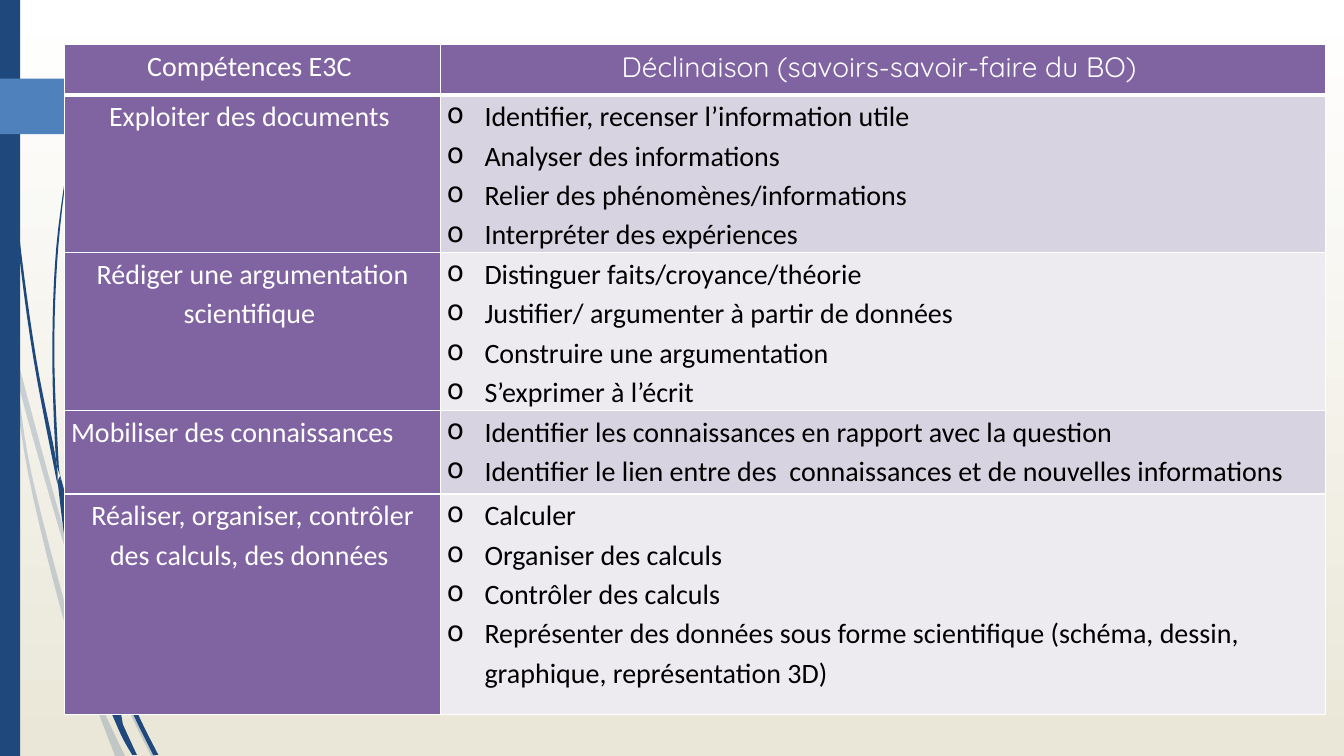
import pptx
import pptx.dml.color
import pptx.enum.shapes
import pptx.enum.text
import pptx.oxml
import pptx.oxml.ns
import pptx.util
from lxml import etree

Cm, Pt = pptx.util.Cm, pptx.util.Pt
RGBColor = pptx.dml.color.RGBColor
ALIGN = pptx.enum.text.PP_ALIGN
SHAPE = pptx.enum.shapes.MSO_SHAPE
qn = pptx.oxml.ns.qn

WHITE = RGBColor(0xFF, 0xFF, 0xFF)
BLACK = RGBColor(0x00, 0x00, 0x00)
CREAM = RGBColor(0xEA, 0xE7, 0xD8)
NAVY = RGBColor(0x1F, 0x49, 0x7D)
BLUE = RGBColor(0x4F, 0x81, 0xBD)
PURPLE = RGBColor(0x80, 0x64, 0xA2)
BANDS = [RGBColor(0xD8, 0xD3, 0xE0), RGBColor(0xED, 0xEA, 0xF0)]

HEADINGS = [("Compétences E3C ", "Calibri"),
            ("Déclinaison (savoirs-savoir-faire du BO) ", "Quicksand")]
# skill, alignment, row height in cm, know-how
SKILLS = [
    ("Exploiter des documents ", ALIGN.CENTER, 3.71, [
        "Identifier, recenser l’information utile",
        "Analyser des informations",
        "Relier des phénomènes/informations",
        "Interpréter des expériences"]),
    ("Rédiger une argumentation scientifique ", ALIGN.CENTER, 3.71, [
        "Distinguer faits/croyance/théorie",
        "Justifier/ argumenter à partir de données",
        "Construire une argumentation",
        "S’exprimer à l’écrit"]),
    ("Mobiliser des connaissances", ALIGN.LEFT, 2.11, [
        "Identifier les connaissances en rapport avec la question",
        "Identifier le lien entre des  connaissances et de nouvelles informations"]),
    ("Réaliser, organiser, contrôler des calculs, des données ", ALIGN.CENTER, 5.56, [
        "Calculer",
        "Organiser des calculs",
        "Contrôler des calculs",
        "Représenter des données sous forme scientifique (schéma, dessin, "
        "graphique, représentation 3D)"]),
]
HEADER_HEIGHT = 1.27
COLUMN_WIDTHS = [9.47, 22.3]
TABLE_LEFT, TABLE_TOP = 1.63, 1.12

# Grass blades: left edge and right edge, in cm from the slide corner
PALE_BLADES = [
    ([(0, 7.59), (0.25, 8.74), (0.71, 11.94), (1.65, 15.77), (2.34, 17.6), (2.9, 19.05)],
     [(0, 7.16), (0.23, 8.18), (0.43, 9.55), (0.79, 11.91), (1.78, 15.72), (2.36, 17.35),
      (3.15, 19.05)]),
    ([(0.36, 8.76), (0.43, 9.55), (1.47, 13.26), (2.13, 15.21)],
     [(0.36, 8.76), (1.57, 13.21), (2.16, 14.88)]),
    ([(7.92, 3.89), (5.79, 6.2), (4.01, 8.84), (2.72, 11.71), (2.16, 14.83), (2.21, 16.41),
      (2.36, 17.35), (2.67, 18.06)],
     [(7.92, 3.91), (5.82, 6.22), (4.06, 8.86), (2.79, 11.73), (2.24, 14.83), (2.31, 16.41),
      (2.67, 18.06)]),
    ([(2.24, 15.49), (3.12, 17.63), (3.81, 19.05)],
     [(2.24, 15.14), (3.23, 17.58), (3.94, 19.05)]),
]
DARK_BLADES = [
    ([(0.08, 0), (0.18, 2.79), (0.43, 5.92), (0.84, 9.02), (1.45, 12.22)],
     [(0.1, 0), (0.2, 2.77), (0.48, 5.89), (0.91, 9.02), (1.4, 11.51), (1.45, 12.22)]),
    ([(1.45, 12.12), (1.73, 14.15), (2.36, 16.74), (2.97, 18.34), (3.33, 19.02)],
     [(1.52, 11.99), (1.63, 12.83), (1.83, 14.12), (2.49, 16.69), (2.79, 17.55),
      (3.1, 18.26), (3.45, 19.02)]),
    ([(1.78, 3.58), (1.42, 6.22), (1.32, 8.86), (1.4, 11.4), (1.52, 11.99)],
     [(1.78, 3.58), (1.47, 6.22), (1.37, 8.86), (1.47, 11.51), (1.52, 11.99)]),
    ([(1.52, 11.99), (1.63, 12.83), (2.24, 15.04), (2.69, 16.38)],
     [(1.52, 11.99), (2.36, 14.99), (2.69, 16.03)]),
    ([(6.6, 8.74), (5.18, 10.29), (3.96, 12.04), (3.1, 14), (2.69, 16.03), (2.69, 16.38),
      (2.79, 17.55), (3.1, 18.26)],
     [(6.63, 8.74), (5.21, 10.31), (4.01, 12.09), (3.18, 14.02), (2.82, 16.08),
      (2.82, 16.66), (3.1, 18.26)]),
    ([(2.82, 16.66), (3.35, 17.98), (3.86, 19.02)],
     [(2.79, 16.28), (3.45, 17.93), (3.99, 19.02)]),
]


def smooth(points, steps=6):
    """Catmull-Rom curve through the points, as a list of EMU pairs."""
    padded = [points[0], *points, points[-1]]
    curve = []
    for a, b, c, d in zip(padded, padded[1:], padded[2:], padded[3:]):
        for t in (step / steps for step in range(steps)):
            curve.append(tuple(
                Cm((2 * q + (r - p) * t + (2 * p - 5 * q + 4 * r - s) * t ** 2
                    + (3 * q - p - 3 * r + s) * t ** 3) / 2)
                for p, q, r, s in zip(a, b, c, d)))
    return curve + [tuple(Cm(v) for v in points[-1])]


def paint(shape, colour, opacity=100):
    shape.shadow.inherit = False
    shape.fill.solid()
    shape.fill.fore_color.rgb = colour
    shape.line.fill.background()
    if opacity < 100:
        rgb = shape.fill._xPr.find(".//" + qn("a:srgbClr"))
        etree.SubElement(rgb, qn("a:alpha"), val=str(opacity * 1000))


def draw_blade(shapes, left_edge, right_edge, opacity):
    outline = smooth(left_edge) + smooth(right_edge)[::-1]
    builder = shapes.build_freeform(*outline[0])
    builder.add_line_segments(outline[1:], close=True)
    paint(builder.convert_to_shape(), NAVY, opacity)


def format_cell(cell, colour, bottom_width=1):
    """Set white borders, then margins and fill."""
    props = cell._tc.get_or_add_tcPr()
    for side, width in (("L", 1), ("R", 1), ("T", 1), ("B", bottom_width)):
        border = etree.SubElement(props, qn("a:ln" + side), w=str(Pt(width)))
        fill = etree.SubElement(border, qn("a:solidFill"))
        etree.SubElement(fill, qn("a:srgbClr"), val=str(WHITE))
    margins = {"margin_left": Cm(0.16), "margin_right": Cm(0.16),
               "margin_top": 0, "margin_bottom": 0}
    for name, value in margins.items():
        setattr(cell, name, value)
    cell.fill.solid()
    cell.fill.fore_color.rgb = colour


def write(paragraph, text, colour, align=ALIGN.LEFT, font="Calibri", bullet=False):
    run = paragraph.add_run()
    run.text = text
    run.font.color.rgb = colour
    for target, values in ((paragraph, {"alignment": align, "line_spacing": 1.15}),
                           (run.font, {"name": font, "size": Pt(20), "bold": False})):
        for name, value in values.items():
            setattr(target, name, value)
    if bullet:
        props = paragraph._p.get_or_add_pPr()
        props.set("marL", str(Cm(0.95)))
        props.set("indent", str(-Cm(0.95)))
        etree.SubElement(props, qn("a:buChar"), char="o")


def draw_backdrop(slide):
    fill = slide.background.fill
    fill.gradient()
    fill.gradient_angle = 270
    for stop, colour, position in zip(fill.gradient_stops, (WHITE, CREAM), (0, 1)):
        stop.color.rgb = colour
        stop.position = position
    for blades, opacity in ((PALE_BLADES, 20), (DARK_BLADES, 100)):
        for left_edge, right_edge in blades:
            draw_blade(slide.shapes, left_edge, right_edge, opacity)
    side_band = slide.shapes.add_shape(SHAPE.RECTANGLE, 0, 0, Cm(0.51), Cm(19.05))
    paint(side_band, NAVY)
    page_arrow = slide.shapes.add_shape(SHAPE.PENTAGON, 0, Cm(1.98), Cm(4.42), Cm(1.4))
    page_arrow.adjustments[0] = 0.47
    paint(page_arrow, BLUE)


def draw_skills(slide):
    heights = [HEADER_HEIGHT] + [height for _, _, height, _ in SKILLS]
    table = slide.shapes.add_table(
        len(heights), len(COLUMN_WIDTHS), Cm(TABLE_LEFT), Cm(TABLE_TOP),
        Cm(sum(COLUMN_WIDTHS)), Cm(sum(heights))).table
    table.first_row = table.horz_banding = False
    for column, width in zip(table.columns, COLUMN_WIDTHS):
        column.width = Cm(width)
    for row, height in zip(table.rows, heights):
        row.height = Cm(height)

    for index, (heading, font) in enumerate(HEADINGS):
        cell = table.cell(0, index)
        format_cell(cell, PURPLE, bottom_width=3)
        write(cell.text_frame.paragraphs[0], heading, WHITE, ALIGN.CENTER, font)
    for index, (skill, align, _, know_how) in enumerate(SKILLS):
        skill_cell, detail_cell = table.cell(index + 1, 0), table.cell(index + 1, 1)
        format_cell(skill_cell, PURPLE)
        write(skill_cell.text_frame.paragraphs[0], skill, WHITE, align)
        format_cell(detail_cell, BANDS[index % 2])
        details = detail_cell.text_frame
        for number, item in enumerate(know_how):
            paragraph = details.add_paragraph() if number else details.paragraphs[0]
            write(paragraph, item, BLACK, bullet=True)


def main():
    deck = pptx.Presentation()
    deck.slide_width, deck.slide_height = Cm(33.87), Cm(19.05)
    slide = deck.slides.add_slide(deck.slide_layouts[6])
    draw_backdrop(slide)
    draw_skills(slide)
    deck.save("out.pptx")


if __name__ == "__main__":
    main()
